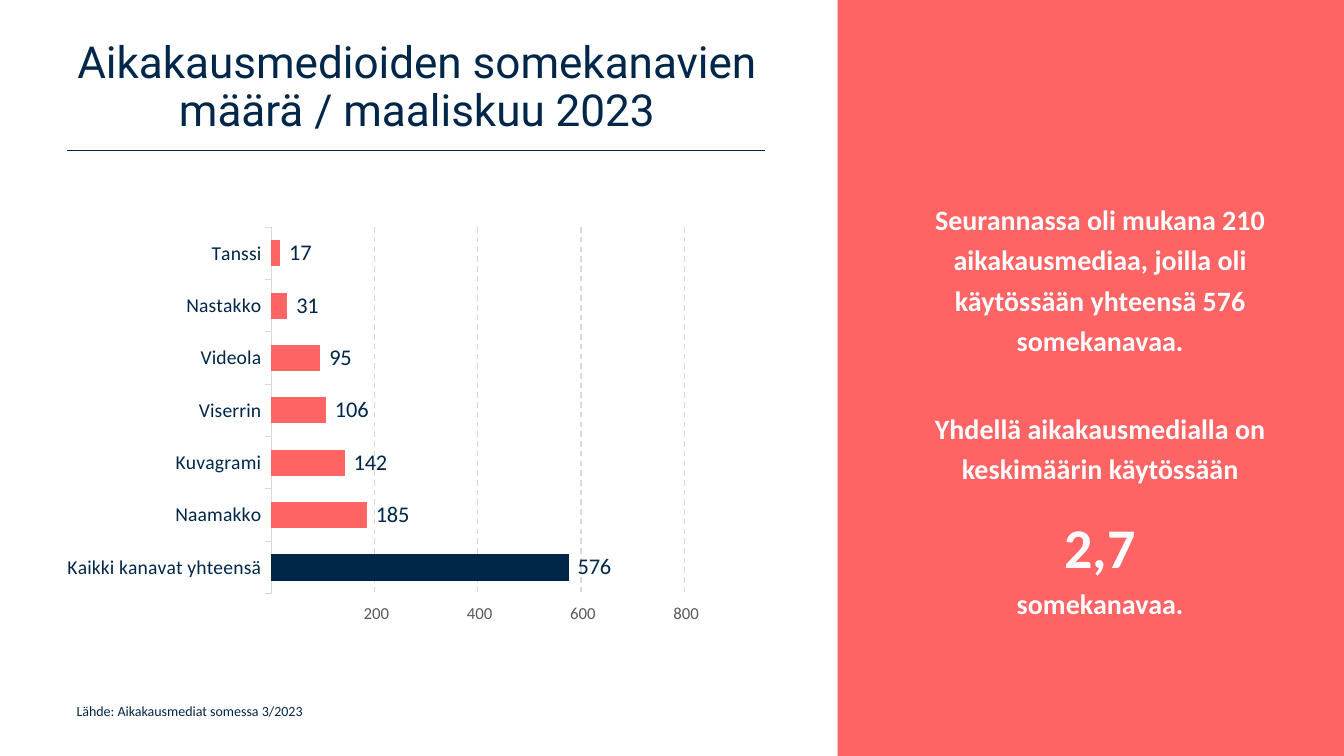
import pptx
import pptx.chart.data
import pptx.dml.color
import pptx.enum.chart
import pptx.enum.dml
import pptx.enum.shapes
import pptx.enum.text
import pptx.oxml
import pptx.util
from pptx.util import Cm, Pt

CORAL = pptx.dml.color.RGBColor(0xFF, 0x64, 0x64)
NAVY = pptx.dml.color.RGBColor(0x00, 0x26, 0x49)
OFF_WHITE = pptx.dml.color.RGBColor(0xFE, 0xFC, 0xFF)
LIGHT_GREY = pptx.dml.color.RGBColor(0xD9, 0xD9, 0xD9)
DARK_GREY = pptx.dml.color.RGBColor(0x59, 0x59, 0x59)
CENTER = pptx.enum.text.PP_ALIGN.CENTER
MIDDLE = pptx.enum.text.MSO_ANCHOR.MIDDLE
HIDE_ZERO = r"#\ ##0;\-#\ ##0;;@"


def add_text(paragraph, text, size, color=NAVY, font="Calibri", bold=False,
             align=None, line_spacing=None, space_before=0):
    paragraph.alignment = align
    paragraph.line_spacing = line_spacing
    paragraph.space_before = Pt(space_before)
    run = paragraph.add_run()
    run.text = text
    set_font(run.font, size, color, font, bold)


def set_font(font, size, color, name="Calibri", bold=False):
    font.size = Pt(size)
    font.name = name
    font.bold = bold
    font.color.rgb = color


presentation = pptx.Presentation()
presentation.slide_width = Cm(33.87)
presentation.slide_height = Cm(19.05)
slide = presentation.slides.add_slide(presentation.slide_layouts[6])
shapes = slide.shapes

# Side panel and title rule
panel = shapes.add_shape(pptx.enum.shapes.MSO_SHAPE.RECTANGLE,
                         Cm(21.11), 0, Cm(12.76), Cm(19.05))
panel.shadow.inherit = False
panel.fill.solid()
panel.fill.fore_color.rgb = CORAL
panel.line.fill.background()

rule = shapes.add_connector(pptx.enum.shapes.MSO_CONNECTOR.STRAIGHT,
                            Cm(1.68), Cm(3.79), Cm(19.28), Cm(3.79))
rule.line.color.rgb = NAVY
rule.line.width = Pt(1)
rule._element.spPr.append(pptx.oxml.parse_xml(
    '<a:effectLst xmlns:a="http://schemas.openxmlformats.org/drawingml/2006/main"/>'))

# Source line and title
source = shapes.add_textbox(Cm(1.68), Cm(17.58), Cm(16.71), Cm(1.12)).text_frame
source.word_wrap = True
add_text(source.paragraphs[0], "Lähde: Aikakausmediat somessa 3/2023", 10)

title = shapes.add_textbox(Cm(1.68), Cm(0.64), Cm(17.65), Cm(3.18)).text_frame
title.word_wrap = True
title.vertical_anchor = MIDDLE
add_text(title.paragraphs[0], "Aikakausmedioiden somekanavien määrä / maaliskuu 2023",
         31.5, font="Roboto", align=CENTER, line_spacing=0.9)

# Key findings on the panel: text, size, space before
findings = [
    ("Seurannassa oli mukana 210 aikakausmediaa, joilla oli käytössään "
     "yhteensä 576 somekanavaa.", 20, 0),
    ("Yhdellä aikakausmedialla on keskimäärin käytössään", 20, 34),
    ("2,7", 40, 10),
    ("somekanavaa.", 20, 0),
]
body = shapes.add_textbox(Cm(22.96), Cm(3.81), Cm(9.53), Cm(12.95)).text_frame
body.word_wrap = True
body.vertical_anchor = MIDDLE
for index, (text, size, space_before) in enumerate(findings):
    paragraph = body.add_paragraph() if index else body.paragraphs[0]
    add_text(paragraph, text, size, color=OFF_WHITE, bold=True, align=CENTER,
             line_spacing=1.2, space_before=space_before)

# Channel chart
channels = {
    "Kaikki kanavat yhteensä": 576,
    "Naamakko": 185,
    "Kuvagrami": 142,
    "Viserrin": 106,
    "Videola": 95,
    "Nastakko": 31,
    "Tanssi": 17,
}
chart_data = pptx.chart.data.CategoryChartData()
chart_data.categories = list(channels)
chart_data.add_series("Somekanavat", list(channels.values()))
chart = shapes.add_chart(pptx.enum.chart.XL_CHART_TYPE.BAR_CLUSTERED,
                         0, Cm(4.78), Cm(21.11), Cm(11.02), chart_data).chart
chart.has_legend = False
chart.has_title = False
chart.font.name = "Calibri"
chart.font.size = Pt(10)

plot = chart.plots[0]
plot.gap_width = 100
plot.vary_by_categories = False
series = plot.series[0]
for fill, color in ((series.format.fill, CORAL), (series.points[0].format.fill, NAVY)):
    fill.solid()
    fill.fore_color.rgb = color

labels = series.data_labels
labels.show_value = True
labels.position = pptx.enum.chart.XL_LABEL_POSITION.OUTSIDE_END
labels.number_format = HIDE_ZERO
labels.number_format_is_linked = False
set_font(labels.font, 16, NAVY)

category_axis = chart.category_axis
category_axis.major_tick_mark = pptx.enum.chart.XL_TICK_MARK.OUTSIDE
category_axis.format.line.color.rgb = LIGHT_GREY
category_axis.format.line.width = Pt(0.75)
set_font(category_axis.tick_labels.font, 14, NAVY)

value_axis = chart.value_axis
value_axis.minimum_scale = 0
value_axis.maximum_scale = 800
value_axis.major_unit = 200
value_axis.major_tick_mark = pptx.enum.chart.XL_TICK_MARK.OUTSIDE
value_axis.format.line.fill.background()
gridline = value_axis.major_gridlines.format.line
gridline.color.rgb = LIGHT_GREY
gridline.width = Pt(1)
gridline.dash_style = pptx.enum.dml.MSO_LINE.DASH
value_axis.tick_labels.number_format = HIDE_ZERO
value_axis.tick_labels.number_format_is_linked = False
set_font(value_axis.tick_labels.font, 12, DARK_GREY)

# Fixed inner plot area, as fractions of the chart frame
plot_area = chart._chartSpace.chart.plotArea
for old_layout in plot_area.findall(pptx.oxml.ns.qn("c:layout")):
    plot_area.remove(old_layout)
position = "".join(f'<c:{name} val="{value}"/>' for name, value in (
    ("layoutTarget", "inner"), ("xMode", "edge"), ("yMode", "edge"),
    ("x", 0.324), ("y", 0.086), ("w", 0.493), ("h", 0.838)))
plot_area.insert(0, pptx.oxml.parse_xml(
    '<c:layout xmlns:c="http://schemas.openxmlformats.org/drawingml/2006/chart">'
    f"<c:manualLayout>{position}</c:manualLayout></c:layout>"))

presentation.save("out.pptx")
